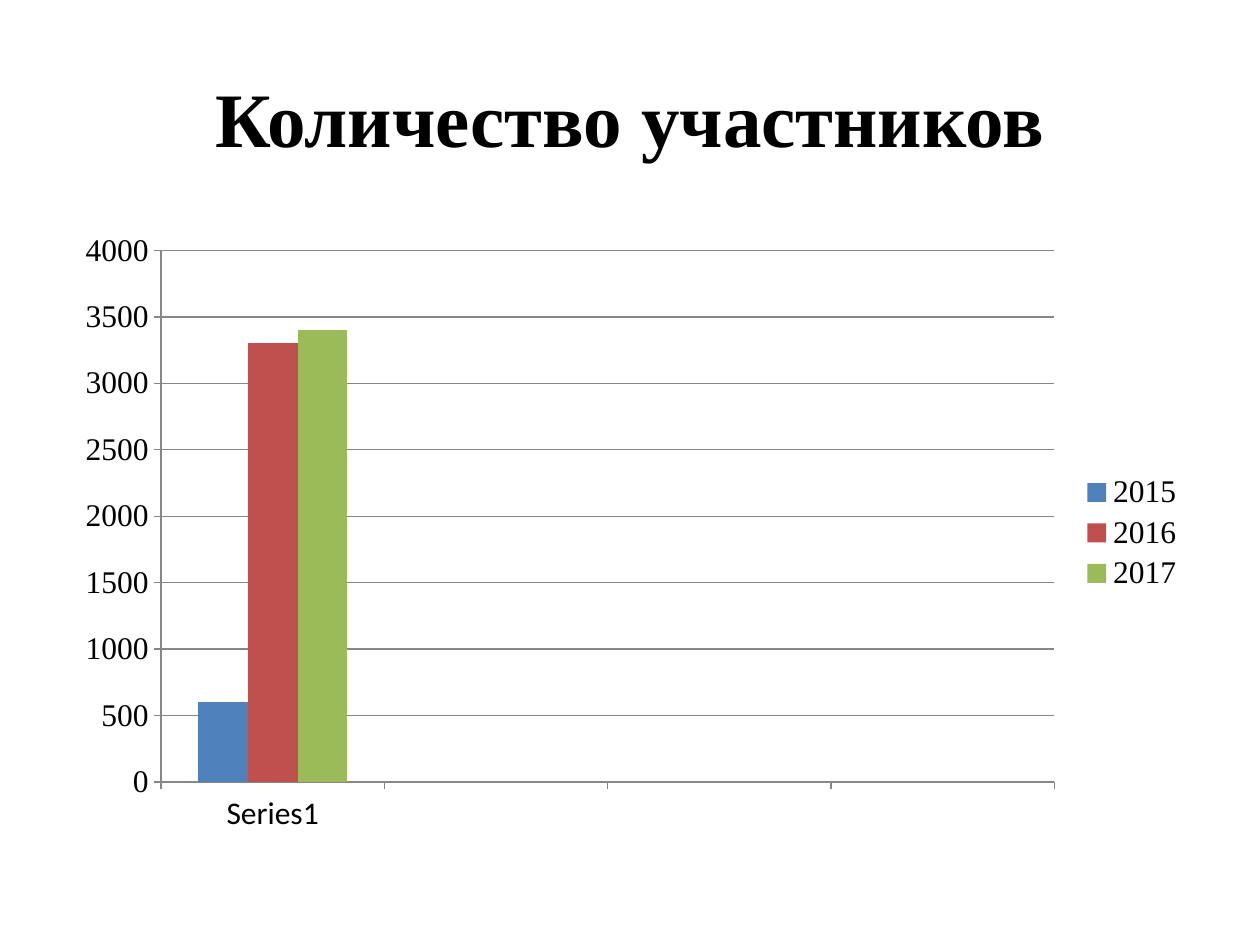
"""Build a slide with a column chart of participants by year."""
from pptx import Presentation
from pptx.chart.data import CategoryChartData
from pptx.dml.color import RGBColor
from pptx.enum.chart import XL_CHART_TYPE, XL_LEGEND_POSITION, XL_TICK_MARK
from pptx.enum.text import MSO_ANCHOR, PP_ALIGN
from pptx.util import Pt

PX = 914400 // 126
SIZE = (1260, 945)
TITLE = "Количество участников"
TITLE_BOX = (63, 38, 1134, 158)
CHART_BOX = (63, 221, 1134, 624)
CATS = ["Series1", "", "", ""]
YEARS = [("2015", 600), ("2016", 3300), ("2017", 3400)]
COLORS = {"text": "000000", "line": "878787",
          "2015": "4F81BD", "2016": "C0504D", "2017": "9BBB59"}
SERIF, SANS = "Times New Roman", "Calibri"


def color(name):
    return RGBColor.from_string(COLORS[name])


def scale(box):
    return [n * PX for n in box]


def style(font, face, size):
    font.name, font.size = face, Pt(size)
    font.color.rgb = color("text")


def rule(line):
    line.color.rgb = color("line")
    line.width = Pt(0.75)


def add_title(slide):
    title = slide.shapes.title
    title.left, title.top, title.width, title.height = scale(TITLE_BOX)
    frame = title.text_frame
    frame.text = TITLE
    frame.vertical_anchor = MSO_ANCHOR.MIDDLE
    para = frame.paragraphs[0]
    para.alignment = PP_ALIGN.CENTER
    font = para.runs[0].font
    style(font, SERIF, 44)
    font.bold = True


def add_columns(slide):
    data = CategoryChartData()
    data.categories = CATS
    for year, count in YEARS:
        data.add_series(year, [count] + [None] * (len(CATS) - 1))
    kind = XL_CHART_TYPE.COLUMN_CLUSTERED
    chart = slide.shapes.add_chart(kind, *scale(CHART_BOX), data).chart
    chart.has_title = False
    style(chart.font, SANS, 18)

    plot = chart.plots[0]
    plot.gap_width, plot.overlap = 150, 0
    plot.vary_by_categories = False
    for bars in plot.series:
        bars.format.fill.solid()
        bars.format.fill.fore_color.rgb = color(bars.name)

    for axis, face in ((chart.category_axis, SANS), (chart.value_axis, SERIF)):
        axis.major_tick_mark = XL_TICK_MARK.OUTSIDE
        axis.minor_tick_mark = XL_TICK_MARK.NONE
        style(axis.tick_labels.font, face, 18)
        rule(axis.format.line)
    axis = chart.value_axis
    axis.minimum_scale, axis.maximum_scale, axis.major_unit = 0, 4000, 500
    axis.has_major_gridlines = True
    rule(axis.major_gridlines.format.line)

    chart.has_legend = True
    chart.legend.position = XL_LEGEND_POSITION.RIGHT
    chart.legend.include_in_layout = False
    style(chart.legend.font, SERIF, 18)


def main():
    deck = Presentation()
    deck.slide_width, deck.slide_height = scale(SIZE)
    slide = deck.slides.add_slide(deck.slide_layouts[5])
    add_title(slide)
    add_columns(slide)
    deck.save("out.pptx")


if __name__ == "__main__":
    main()
